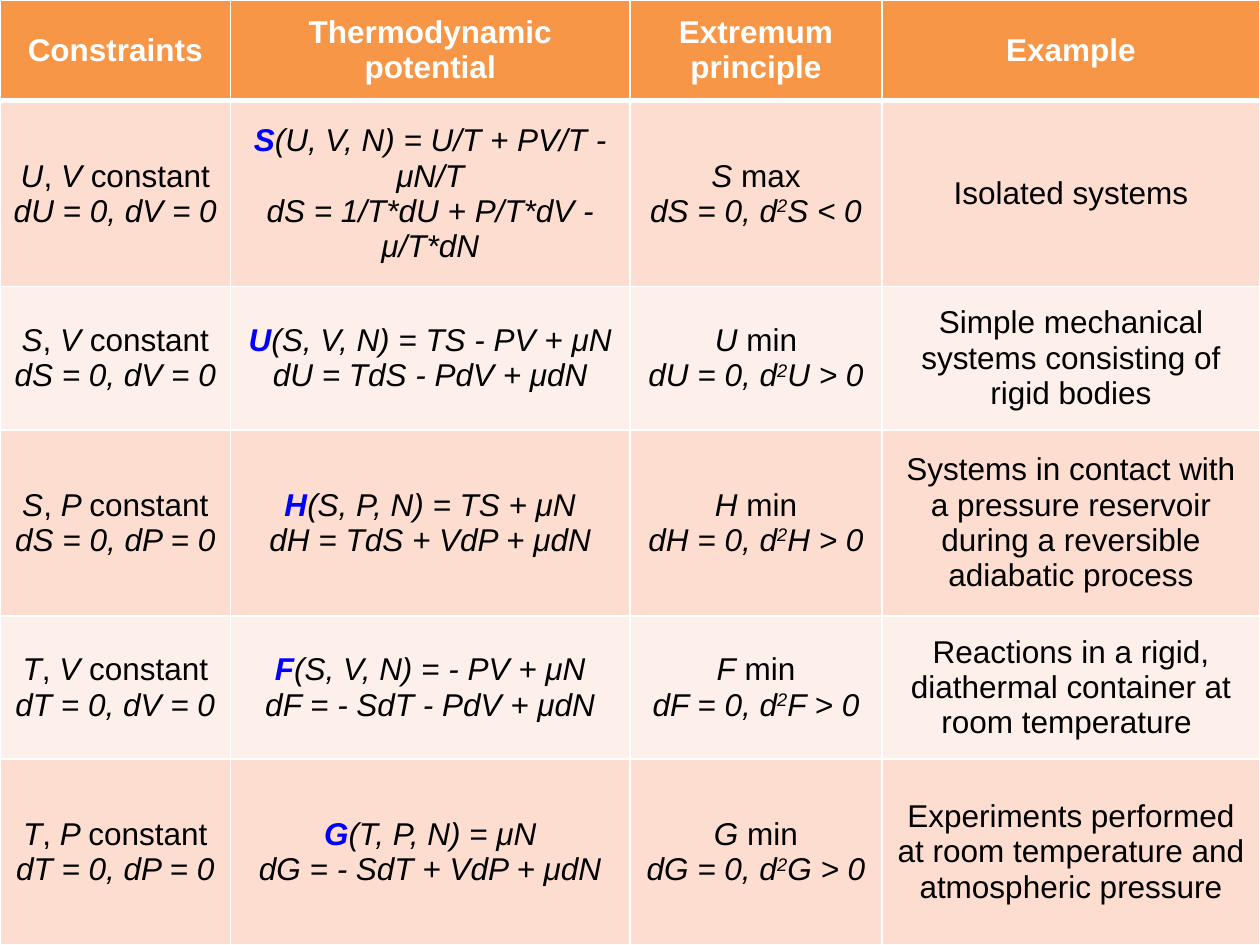
from dataclasses import dataclass
from lxml.etree import SubElement as Sub
from pptx import Presentation
from pptx.dml.color import RGBColor as RGB
from pptx.enum.text import MSO_ANCHOR as Anchor, PP_ALIGN as Align
from pptx.oxml.ns import qn
from pptx.util import Pt

# Content
HEADS = ["Constraints", "Thermodynamic potential", "Extremum principle", "Example"]
# held pair, potential, its arguments and value, differential, extremum, sign, example
ROWS = [
    ("UV", "S", "(U, V, N) = U/T + PV/T - μN/T", "dS = 1/T*dU + P/T*dV - μ/T*dN",
     "max", "<", "Isolated systems"),
    ("SV", "U", "(S, V, N) = TS - PV + μN", "dU = TdS - PdV + μdN",
     "min", ">", "Simple mechanical systems consisting of rigid bodies"),
    ("SP", "H", "(S, P, N) = TS + μN", "dH = TdS + VdP + μdN",
     "min", ">", "Systems in contact with a pressure reservoir during a "
     "reversible adiabatic process"),
    ("TV", "F", "(S, V, N) = - PV + μN", "dF = - SdT - PdV + μdN",
     "min", ">", "Reactions in a rigid, diathermal container at room temperature "),
    ("TP", "G", "(T, P, N) = μN", "dG = - SdT + VdP + μdN",
     "min", ">", "Experiments performed at room temperature and atmospheric pressure"),
]


@dataclass(frozen=True)
class Theme:
    font: str = "Arial"
    size: int = 18
    head: str = "F79646"
    bands: tuple = ("FCDDCF", "FDEFE9")
    white: str = "FFFFFF"
    black: str = "000000"
    blue: str = "0000FF"
    thin: int = 1
    thick: int = 3


T = Theme()
WIDE, HIGH = 720, 540
COLS = [131.76, 228.24, 144, 216]
HEAD, TALL, LOW = 57.6, 106.2, 81.9
TALLS = [HEAD] + [LOW if i % 2 else TALL for i in range(len(ROWS))]


# Runs are (text, style): i italic, b bold blue, h header, ^ raised
def lines(row):
    """Paragraphs of each cell in one body row."""
    (one, two), name, value, diff, end, sign, case = row
    return [
        [[(one, "i"), (", ", ""), (two + " ", "i"), ("constant", "")],
         [(f"d{one} = 0, d{two} = 0", "i")]],
        [[(name, "ib"), (value, "i")], [(diff, "i")]],
        [[(name, "i"), (" " + end, "")],
         [(f"d{name} = 0, d", "i"), ("2", "i^"), (f"{name} {sign} 0", "i")]],
        [[(case, "")]],
    ]


def write(para, text, style):
    run = para.add_run()
    run.text = text
    font = run.font
    font.name, font.size = T.font, Pt(T.size)
    font.italic = "i" in style
    font.bold = "b" in style or "h" in style
    tint = T.blue if "b" in style else T.white if "h" in style else T.black
    font.color.rgb = RGB.from_string(tint)
    if "^" in style:
        run._r.get_or_add_rPr().set("baseline", "30000")


def edge(cell, top, base):
    """White borders; they must precede the fill in the cell properties."""
    props = cell._tc.get_or_add_tcPr()
    for side, size in zip("LRTB", (T.thin, T.thin, top, base)):
        line = Sub(props, qn("a:ln" + side), w=str(Pt(size)))
        Sub(Sub(line, qn("a:solidFill")), qn("a:srgbClr"), val=T.white)


def fill(cell, paras, back, top, base):
    edge(cell, top, base)
    cell.fill.solid()
    cell.fill.fore_color.rgb = RGB.from_string(back)
    cell.vertical_anchor = Anchor.MIDDLE
    frame = cell.text_frame
    for i, runs in enumerate(paras):
        para = frame.add_paragraph() if i else frame.paragraphs[0]
        para.alignment = Align.CENTER
        for text, style in runs:
            write(para, text, style)


def main():
    deck = Presentation()
    deck.slide_width, deck.slide_height = Pt(WIDE), Pt(HIGH)
    slide = deck.slides.add_slide(deck.slide_layouts[6])

    # Table grid
    grid = slide.shapes.add_table(
        len(TALLS), len(COLS), Pt(0), Pt(0), Pt(WIDE), Pt(HIGH)).table
    grid.first_row = grid.horz_banding = False
    for col, wide in zip(grid.columns, COLS):
        col.width = Pt(wide)
    for row, high in zip(grid.rows, TALLS):
        row.height = Pt(high)

    # Header row, then banded body rows
    cells = [[[[(head, "h")]] for head in HEADS]] + [lines(row) for row in ROWS]
    for r, row in enumerate(cells):
        back = T.bands[(r - 1) % 2] if r else T.head
        top = T.thick if r == 1 else T.thin
        base = T.thick if r == 0 else T.thin
        for c, paras in enumerate(row):
            fill(grid.cell(r, c), paras, back, top, base)

    deck.save("out.pptx")


if __name__ == "__main__":
    main()
